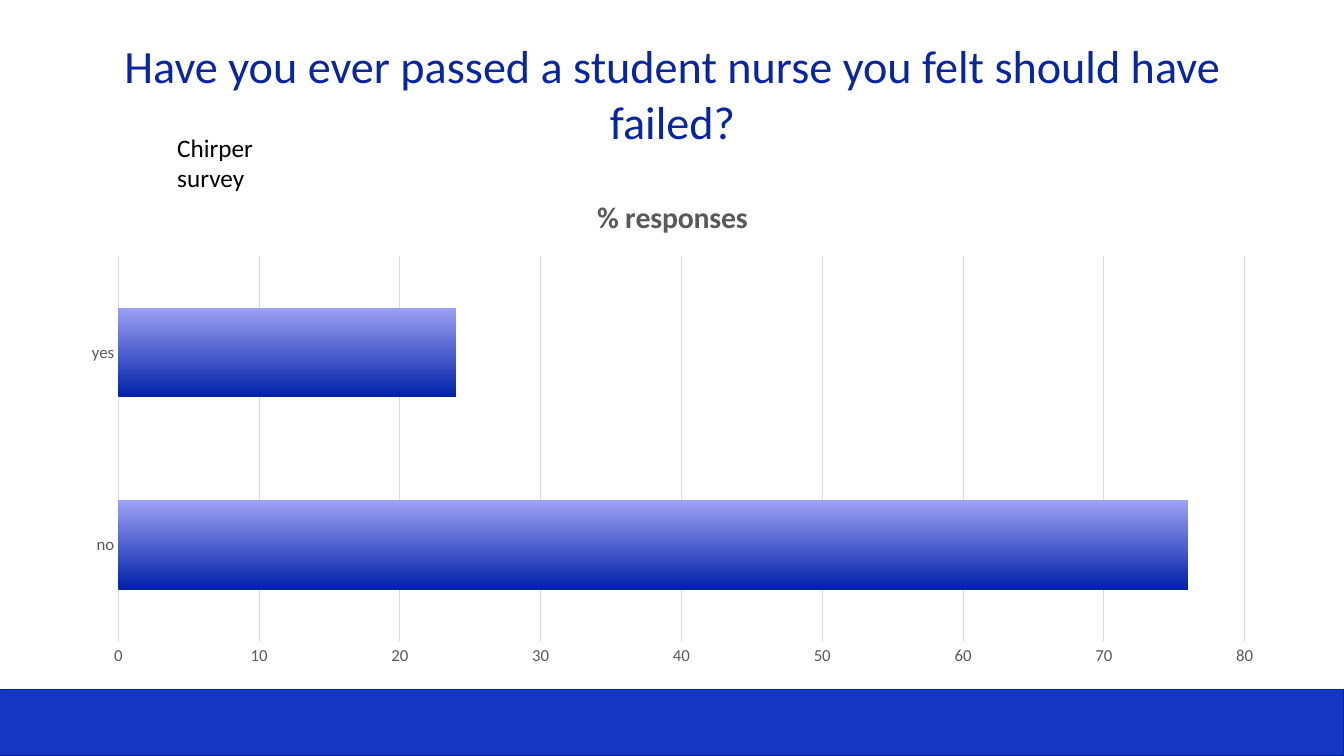
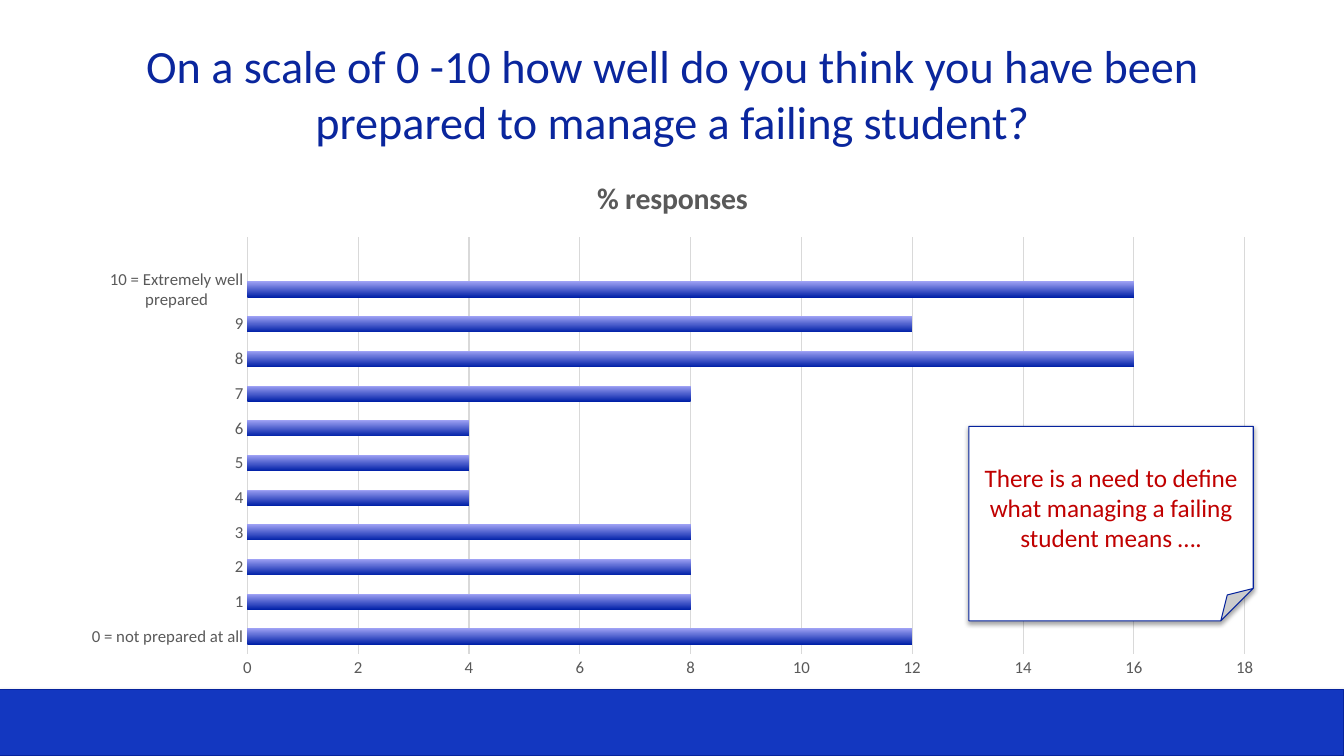
from dataclasses import dataclass

from lxml import etree
from pptx import Presentation
from pptx.chart.data import CategoryChartData
from pptx.dml.color import RGBColor
from pptx.enum.chart import XL_CHART_TYPE, XL_TICK_MARK
from pptx.enum.shapes import MSO_SHAPE
from pptx.enum.text import MSO_ANCHOR, MSO_AUTO_SIZE, PP_ALIGN
from pptx.oxml.ns import qn
from pptx.util import Inches, Pt

BAR_CLUSTERED = XL_CHART_TYPE.BAR_CLUSTERED
NO_TICK = XL_TICK_MARK.NONE
RECTANGLE = MSO_SHAPE.RECTANGLE
FOLDED_CORNER = MSO_SHAPE.FOLDED_CORNER
MIDDLE = MSO_ANCHOR.MIDDLE
CENTER = PP_ALIGN.CENTER
NO_AUTOFIT = MSO_AUTO_SIZE.NONE
GROW_TO_TEXT = MSO_AUTO_SIZE.SHAPE_TO_FIT_TEXT

FONT = "Calibri"
TITLE_BLUE = RGBColor(0x0A, 0x26, 0x9D)
BAND_BLUE = RGBColor(0x13, 0x37, 0xC0)
LINE_BLUE = RGBColor(0x06, 0x23, 0x9D)
BAR_DARK = RGBColor(0x00, 0x20, 0xA7)
BAR_LIGHT = RGBColor(0x9E, 0xA1, 0xF4)
CHART_GRAY = RGBColor(0x59, 0x59, 0x59)
GRID_GRAY = RGBColor(0xD9, 0xD9, 0xD9)
SHADOW_GRAY = RGBColor(0x80, 0x80, 0x80)
NOTE_RED = RGBColor(0xC0, 0x00, 0x00)
BLACK = RGBColor(0x00, 0x00, 0x00)
WHITE = RGBColor(0xFF, 0xFF, 0xFF)

SLIDE_WIDTH, SLIDE_HEIGHT = 13.33, 7.5
BAND_HEIGHT = 0.66
MARGIN, CONTENT_WIDTH = 0.67, 12
TITLE_ONLY_LAYOUT = 5


@dataclass(frozen=True)
class Box:
    left: float
    top: float
    width: float
    height: float

    def lengths(self) -> tuple:
        return (Inches(self.left), Inches(self.top),
                Inches(self.width), Inches(self.height))


@dataclass(frozen=True)
class Survey:
    """One question with its answers, listed from the bottom bar upwards."""
    question: str
    categories: tuple
    percentages: tuple
    chart_box: Box
    axis_maximum: int
    axis_step: int


TITLE_BOX = Box(MARGIN, 0.3, CONTENT_WIDTH, 1.25)
BAND_BOX = Box(0, SLIDE_HEIGHT - BAND_HEIGHT, SLIDE_WIDTH, BAND_HEIGHT)

PASSED_SURVEY = Survey(
    "Have you ever passed a student nurse you felt should have failed?",
    ("no", "yes"),
    (76, 24),
    Box(MARGIN, 1.75, CONTENT_WIDTH, 4.95), 80, 10,
)
# The last category is an empty slot above the top bar.
PREPARED_SURVEY = Survey(
    "On a scale of 0 -10 how well do you think you have been prepared "
    "to manage a failing student?",
    ("0 = not prepared at all", *map(str, range(1, 10)),
     "10 = Extremely well prepared", ""),
    (12, 8, 8, 8, 4, 4, 4, 8, 16, 12, 16, None),
    Box(MARGIN, 1.55, CONTENT_WIDTH, 5.28), 18, 2,
)


def style_font(font, size: float, color: RGBColor, bold: bool = False) -> None:
    font.name = FONT
    font.size = Pt(size)
    font.bold = bold
    font.color.rgb = color


def add_run(paragraph, text: str, size: float, color: RGBColor,
            bold: bool = False) -> None:
    run = paragraph.add_run()
    run.text = text
    style_font(run.font, size, color, bold)


def add_shadow(shape, color: RGBColor) -> None:
    """Replace the theme shadow by a soft one that falls straight down."""
    shape.shadow.inherit = False
    effects = shape._element.spPr.find(qn("a:effectLst"))
    shadow = etree.SubElement(effects, qn("a:outerShdw"), blurRad="40000",
                              dist="23000", dir="5400000", rotWithShape="0")
    shadow_color = etree.SubElement(shadow, qn("a:srgbClr"), val=str(color))
    etree.SubElement(shadow_color, qn("a:alpha"), val="35000")


def add_outlined_shape(slide, kind, box: Box, fill: RGBColor,
                       shadow: RGBColor):
    shape = slide.shapes.add_shape(kind, *box.lengths())
    shape.fill.solid()
    shape.fill.fore_color.rgb = fill
    shape.line.color.rgb = LINE_BLUE
    shape.line.width = Pt(0.75)
    add_shadow(shape, shadow)
    return shape


def set_title(slide, text: str) -> None:
    title = slide.shapes.title
    title.left, title.top, title.width, title.height = TITLE_BOX.lengths()
    frame = title.text_frame
    frame.word_wrap = True
    frame.auto_size = NO_AUTOFIT
    frame.vertical_anchor = MIDDLE
    paragraph = frame.paragraphs[0]
    paragraph.alignment = CENTER
    add_run(paragraph, text, 33, TITLE_BLUE)


def style_axes(chart, survey: Survey) -> None:
    category_axis, value_axis = chart.category_axis, chart.value_axis
    for axis in (category_axis, value_axis):
        axis.major_tick_mark = NO_TICK
        axis.minor_tick_mark = NO_TICK
        style_font(axis.tick_labels.font, 12, CHART_GRAY)
    category_axis.format.line.color.rgb = GRID_GRAY
    category_axis.format.line.width = Pt(1)
    value_axis.format.line.fill.background()
    value_axis.minimum_scale = 0
    value_axis.maximum_scale = survey.axis_maximum
    value_axis.major_unit = survey.axis_step
    value_axis.has_major_gridlines = True
    grid_line = value_axis.major_gridlines.format.line
    grid_line.color.rgb = GRID_GRAY
    grid_line.width = Pt(0.75)


def add_survey_chart(slide, survey: Survey) -> None:
    data = CategoryChartData()
    data.categories = survey.categories
    data.add_series("% responses", survey.percentages)
    chart = slide.shapes.add_chart(
        BAR_CLUSTERED, *survey.chart_box.lengths(), data).chart
    style_font(chart.font, 10, BLACK)
    chart.has_legend = False
    chart.has_title = True
    add_run(chart.chart_title.text_frame.paragraphs[0], "% responses",
            21.3, CHART_GRAY, bold=True)
    chart.chart_title.include_in_layout = False
    style_axes(chart, survey)

    plot = chart.plots[0]
    plot.vary_by_categories = False
    plot.gap_width = 115
    plot.overlap = -20
    fill = plot.series[0].format.fill
    fill.gradient()
    fill.gradient_angle = 90
    for stop, color in zip(fill.gradient_stops, (BAR_DARK, BAR_LIGHT)):
        stop.color.rgb = color


def add_survey_slide(presentation, survey: Survey):
    layout = presentation.slide_layouts[TITLE_ONLY_LAYOUT]
    slide = presentation.slides.add_slide(layout)
    add_outlined_shape(slide, RECTANGLE, BAND_BOX, BAND_BLUE, SHADOW_GRAY)
    set_title(slide, survey.question)
    add_survey_chart(slide, survey)
    return slide


def add_source_label(slide, text: str) -> None:
    label = slide.shapes.add_textbox(*Box(1.66, 1.26, 1.66, 0.4).lengths())
    frame = label.text_frame
    frame.word_wrap = False
    frame.auto_size = GROW_TO_TEXT
    add_run(frame.paragraphs[0], text, 18, BLACK)


def add_note(slide, text: str) -> None:
    note = add_outlined_shape(slide, FOLDED_CORNER,
                              Box(9.61, 4.23, 2.82, 1.93), WHITE, BLACK)
    frame = note.text_frame
    frame.word_wrap = True
    frame.vertical_anchor = MIDDLE
    paragraph = frame.paragraphs[0]
    paragraph.alignment = CENTER
    add_run(paragraph, text, 18, NOTE_RED)


def main() -> None:
    presentation = Presentation()
    presentation.slide_width = Inches(SLIDE_WIDTH)
    presentation.slide_height = Inches(SLIDE_HEIGHT)

    passed_slide = add_survey_slide(presentation, PASSED_SURVEY)
    add_source_label(passed_slide, "Chirper survey")

    prepared_slide = add_survey_slide(presentation, PREPARED_SURVEY)
    add_note(prepared_slide,
             "There is a need to define what managing a failing "
             "student means ….")

    presentation.save("out.pptx")


if __name__ == "__main__":
    main()
